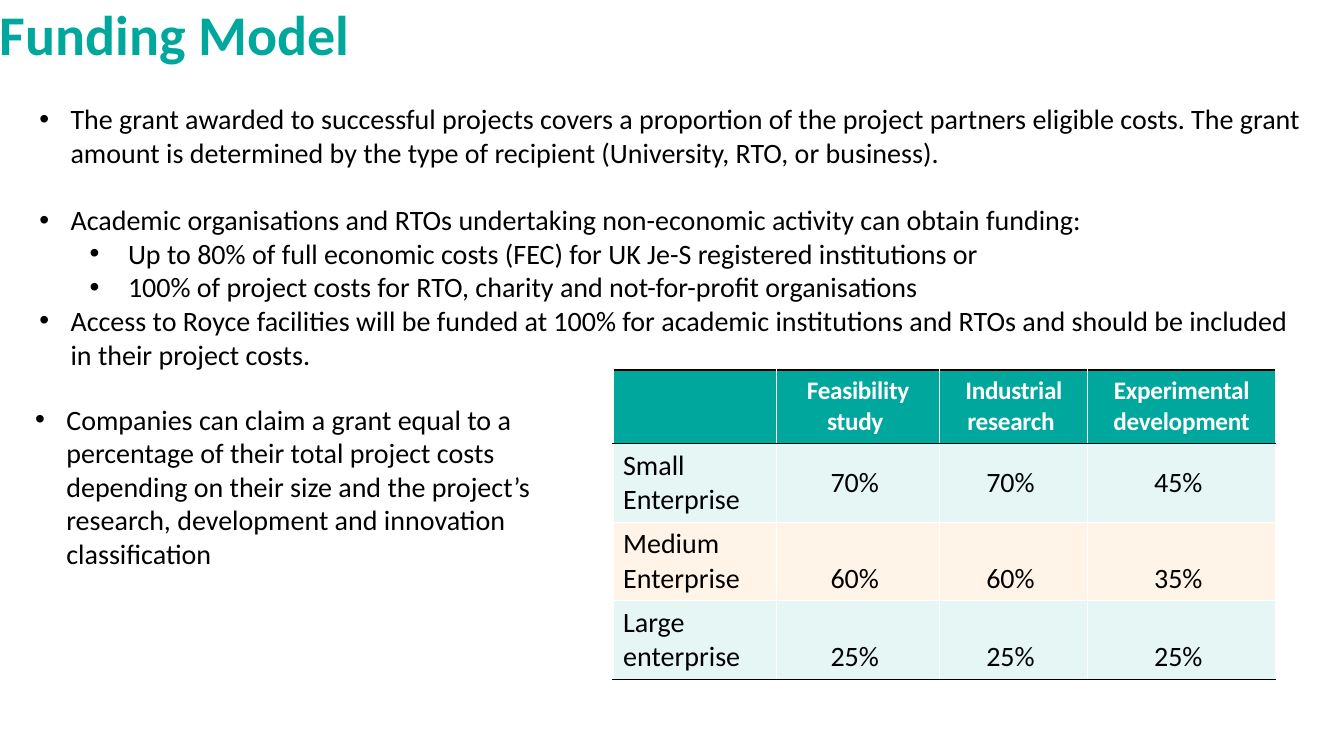
import dataclasses

import pptx
import pptx.dml.color
import pptx.enum.text
import pptx.oxml
import pptx.oxml.ns
import pptx.util

PX = 9144
ALIGN = pptx.enum.text.PP_ALIGN
ANCHOR = pptx.enum.text.MSO_ANCHOR


@dataclasses.dataclass(frozen=True)
class Theme:
    font: str = "Calibri"
    teal: str = "00A79D"
    mint: str = "E6F6F5"
    cream: str = "FFF4E7"
    black: str = "000000"
    white: str = "FFFFFF"
    title: int = 40
    body: int = 20
    head: int = 18
    line: int = 24


class Deck:
    def __init__(self, theme):
        self.theme = theme
        self.show = pptx.Presentation()
        self.show.slide_width = 1333 * PX
        self.show.slide_height = 750 * PX
        self.slide = self.show.slides.add_slide(self.show.slide_layouts[6])

    def run(self, para, text, size, color, bold=False):
        run = para.add_run()
        run.text = text
        font = run.font
        font.name = self.theme.font
        font.size = pptx.util.Pt(size)
        font.bold = bold
        font.color.rgb = pptx.dml.color.RGBColor.from_string(color)
        return run

    def box(self, place, inset=(0, 0)):
        shape = self.slide.shapes.add_textbox(*(n * PX for n in place))
        frame = shape.text_frame
        frame.word_wrap = True
        frame.margin_left = frame.margin_right = inset[0] * PX
        frame.margin_top = frame.margin_bottom = inset[1] * PX
        return frame

    def title(self, place, text):
        para = self.box(place).paragraphs[0]
        self.run(para, text, self.theme.title, self.theme.teal, True)

    def bullet(self, para, level):
        left, hang = ((31, 31), (88, 38))[level]
        para.level = level
        props = para._p.get_or_add_pPr()
        props.set("marL", str(left * PX))
        props.set("indent", str(-hang * PX))
        for tag in ('buFont typeface="Arial"', 'buChar char="•"'):
            props.append(pptx.oxml.parse_xml(
                f"<a:{tag} {pptx.oxml.ns.nsdecls('a')}/>"))

    def points(self, place, items, inset=(0, 0)):
        frame = self.box(place, inset)
        for i, (level, gap, text) in enumerate(items):
            para = frame.add_paragraph() if i else frame.paragraphs[0]
            self.bullet(para, level)
            if gap:
                para.space_after = pptx.util.Pt(gap)
            self.run(para, text, self.theme.body, self.theme.black)

    def border(self, cell, top, bottom):
        props = cell._tc.get_or_add_tcPr()
        sides = {"L": self.theme.white, "R": self.theme.white,
                 "T": top, "B": bottom}
        for i, (side, color) in enumerate(sides.items()):
            props.insert(i, pptx.oxml.parse_xml(
                f'<a:ln{side} {pptx.oxml.ns.nsdecls("a")} w="12700">'
                f'<a:solidFill><a:srgbClr val="{color}"/></a:solidFill>'
                f'</a:ln{side}>'))

    def cell(self, cell, text, row, col):
        theme = self.theme
        head = row == 0
        cell.fill.solid()
        fill = theme.teal if head else (theme.cream, theme.mint)[row % 2]
        cell.fill.fore_color.rgb = pptx.dml.color.RGBColor.from_string(fill)
        low = row > 1 and col > 0
        cell.vertical_anchor = ANCHOR.BOTTOM if low else ANCHOR.MIDDLE
        if not text:
            return
        para = cell.text_frame.paragraphs[0]
        para.alignment = ALIGN.CENTER if head or col else ALIGN.LEFT
        if head:
            run = self.run(para, text, theme.head, theme.white, True)
            run._r.get_or_add_rPr().set("spc", "-20")
        else:
            self.run(para, text, theme.body, theme.black)

    def table(self, spot, wide, high, data):
        size = (sum(wide), sum(high))
        grid = self.slide.shapes.add_table(
            len(high), len(wide), *(n * PX for n in spot + size)).table
        grid.horz_banding = False
        for col, width in zip(grid.columns, wide):
            col.width = width * PX
        for row, height in zip(grid.rows, high):
            row.height = height * PX
        black, white = self.theme.black, self.theme.white
        last = len(data) - 1
        for r, texts in enumerate(data):
            top = black if r < 2 else white
            bottom = black if r in (0, last) else white
            for c, text in enumerate(texts):
                cell = grid.cell(r, c)
                self.cell(cell, text, r, c)
                self.border(cell, top, bottom)


def main():
    theme = Theme()
    deck = Deck(theme)
    deck.title((0, 0, 1316, 69), "Funding Model")
    deck.points((39, 101, 1253, 293), [
        (0, theme.line, "The grant awarded to successful projects covers a "
         "proportion of the project partners eligible costs. The grant amount "
         "is determined by the type of recipient (University, RTO, or "
         "business)."),
        (0, 0, "Academic organisations and RTOs undertaking non-economic "
         "activity can obtain funding: "),
        (1, 0, "Up to 80% of full economic costs (FEC) for UK Je-S registered "
         "institutions or "),
        (1, 0, "100% of project costs for RTO, charity and not-for-profit "
         "organisations "),
        (0, 0, "Access to Royce facilities will be funded at 100% for academic "
         "institutions and RTOs and should be included in their project "
         "costs."),
    ])
    deck.table((608, 367), (162, 162, 147, 186), (73, 78, 78, 78), [
        ("", "Feasibility study ", "Industrial research ",
         "Experimental development"),
        ("Small Enterprise ", "70% ", "70% ", "45% "),
        ("Medium Enterprise ", "60% ", "60% ", "35% "),
        ("Large enterprise  ", "25% ", "25% ", "25% "),
    ])
    deck.points((25, 394, 584, 212), [
        (0, 0, "Companies can claim a grant equal to a percentage of their "
         "total project costs depending on their size and the project’s "
         "research, development and innovation classification"),
    ], (10, 5))
    deck.show.save("out.pptx")


if __name__ == "__main__":
    main()
